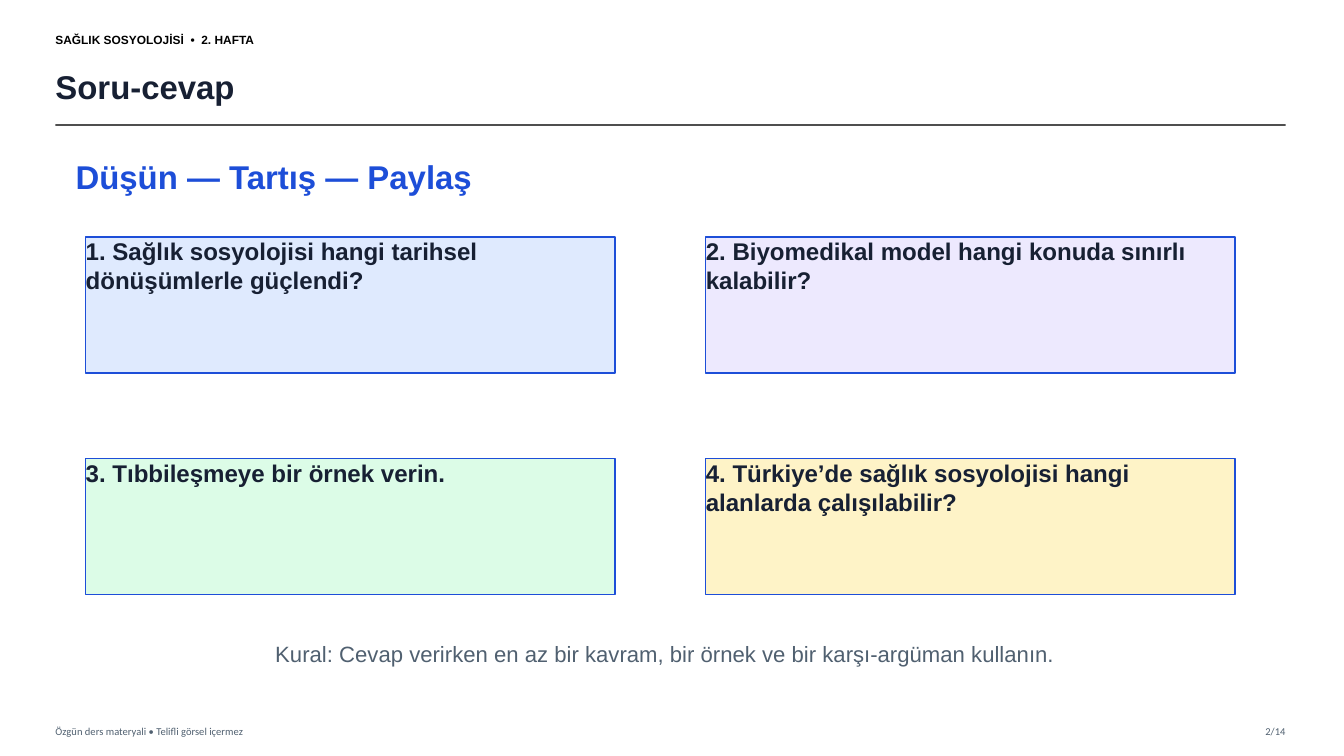
from dataclasses import dataclass
from lxml.etree import SubElement as Sub
from pptx import Presentation
from pptx.dml.color import RGBColor as Rgb
from pptx.enum.shapes import MSO_CONNECTOR as Conn, MSO_SHAPE as Form
from pptx.enum.text import MSO_ANCHOR as Anchor, PP_ALIGN as Align
from pptx.oxml.ns import qn
from pptx.util import Inches, Pt


@dataclass(frozen=True)
class Theme:
    head: str = "Arial"
    foot: str = "Calibri"
    black: str = "000000"
    ink: str = "172033"
    blue: str = "1D4ED8"
    gray: str = "506070"
    rule: str = "333333"
    fills: tuple = ("DFEAFE", "EDE9FE", "DCFCE7", "FEF3C7")
    tag: float = 8.5
    title: float = 23.5
    card: float = 17.2
    note: float = 15.8
    small: float = 7.5


@dataclass(frozen=True)
class Box:
    x: float
    y: float
    w: float
    h: float

    def area(self, x, y, w, h):
        return Box(self.x + x, self.y + y, w, h)

    def emu(self):
        return [Inches(n) for n in (self.x, self.y, self.w, self.h)]


T = Theme()
ASKS = (
    "1. Sağlık sosyolojisi hangi tarihsel dönüşümlerle güçlendi?",
    "2. Biyomedikal model hangi konuda sınırlı kalabilir?",
    "3. Tıbbileşmeye bir örnek verin.",
    "4. Türkiye’de sağlık sosyolojisi hangi alanlarda çalışılabilir?",
)


def write(shape, text, size, color, bold=False, font=T.head,
          align=Align.LEFT, anchor=Anchor.TOP):
    frame = shape.text_frame
    frame.word_wrap = True
    frame.vertical_anchor = anchor
    frame.margin_left = frame.margin_right = 0
    frame.margin_top = frame.margin_bottom = 0
    para = frame.paragraphs[0]
    para.alignment = align
    run = para.add_run()
    run.text = text
    run.font.name = font
    run.font.size = Pt(size)
    run.font.bold = bold
    run.font.color.rgb = Rgb.from_string(color)


def label(slide, box, *args, **style):
    write(slide.shapes.add_textbox(*box.emu()), *args, **style)


def rule(slide, box):
    x, y, w, h = box.emu()
    line = slide.shapes.add_connector(Conn.STRAIGHT, x, y, x + w, y + h)
    line.line.width = Pt(1.2)
    line.line.color.rgb = Rgb.from_string(T.rule)
    props = line._element.spPr
    color = props.find(".//" + qn("a:srgbClr"))
    Sub(color, qn("a:alpha"), val="85000")
    Sub(props, qn("a:effectLst"))


def header(slide, box):
    label(slide, box.area(0, 0, 3.6, 0.28), "SAĞLIK SOSYOLOJİSİ  •  2. HAFTA",
          T.tag, T.black, bold=True, anchor=Anchor.MIDDLE)
    label(slide, box.area(0, 0.33, box.w - 0.25, 0.55), "Soru-cevap",
          T.title, T.ink, bold=True, anchor=Anchor.MIDDLE)
    rule(slide, box.area(0, box.h, box.w, 0))


def footer(slide, box):
    style = dict(font=T.foot, anchor=Anchor.MIDDLE)
    label(slide, box.area(0, 0, 6, box.h),
          "Özgün ders materyali • Telifli görsel içermez",
          T.small, T.gray, **style)
    label(slide, box.area(box.w - 0.65, 0, 0.65, box.h), "2/14",
          T.small, T.gray, align=Align.RIGHT, **style)


def cards(slide, box, cols=2, gap=(0.9, 0.85)):
    rows = len(ASKS) // cols
    wide = (box.w - gap[0] * (cols - 1)) / cols
    high = (box.h - gap[1] * (rows - 1)) / rows
    for i, (ask, fill) in enumerate(zip(ASKS, T.fills)):
        row, col = divmod(i, cols)
        cell = box.area(col * (wide + gap[0]), row * (high + gap[1]), wide, high)
        card = slide.shapes.add_shape(Form.RECTANGLE, *cell.emu())
        card.shadow.inherit = False
        card.fill.solid()
        card.fill.fore_color.rgb = Rgb.from_string(fill)
        card.line.color.rgb = Rgb.from_string(T.blue)
        card.line.width = Pt(1)
        write(card, ask, T.card, T.ink, bold=True)


def body(slide, box):
    label(slide, box.area(0, 0, 5.7, 0.5), "Düşün — Tartış — Paylaş",
          T.title, T.blue, bold=True)
    cards(slide, box.area(0.1, 0.8, 11.4, 3.55))
    label(slide, box.area(0.25, 4.8, 11.2, 0.35),
          "Kural: Cevap verirken en az bir kavram, bir örnek ve bir "
          "karşı-argüman kullanın.", T.note, T.gray, align=Align.CENTER)


def main():
    deck = Presentation()
    deck.slide_width, deck.slide_height = Inches(13.33), Inches(7.5)
    slide = deck.slides.add_slide(deck.slide_layouts[6])
    page = Box(0.55, 0.25, 12.2, 7.11)
    header(slide, page.area(0, 0, page.w, 0.99))
    footer(slide, page.area(0, page.h - 0.22, page.w, 0.22))
    body(slide, page.area(0.2, 1.3, 11.6, 5.15))
    deck.save("out.pptx")


if __name__ == "__main__":
    main()
